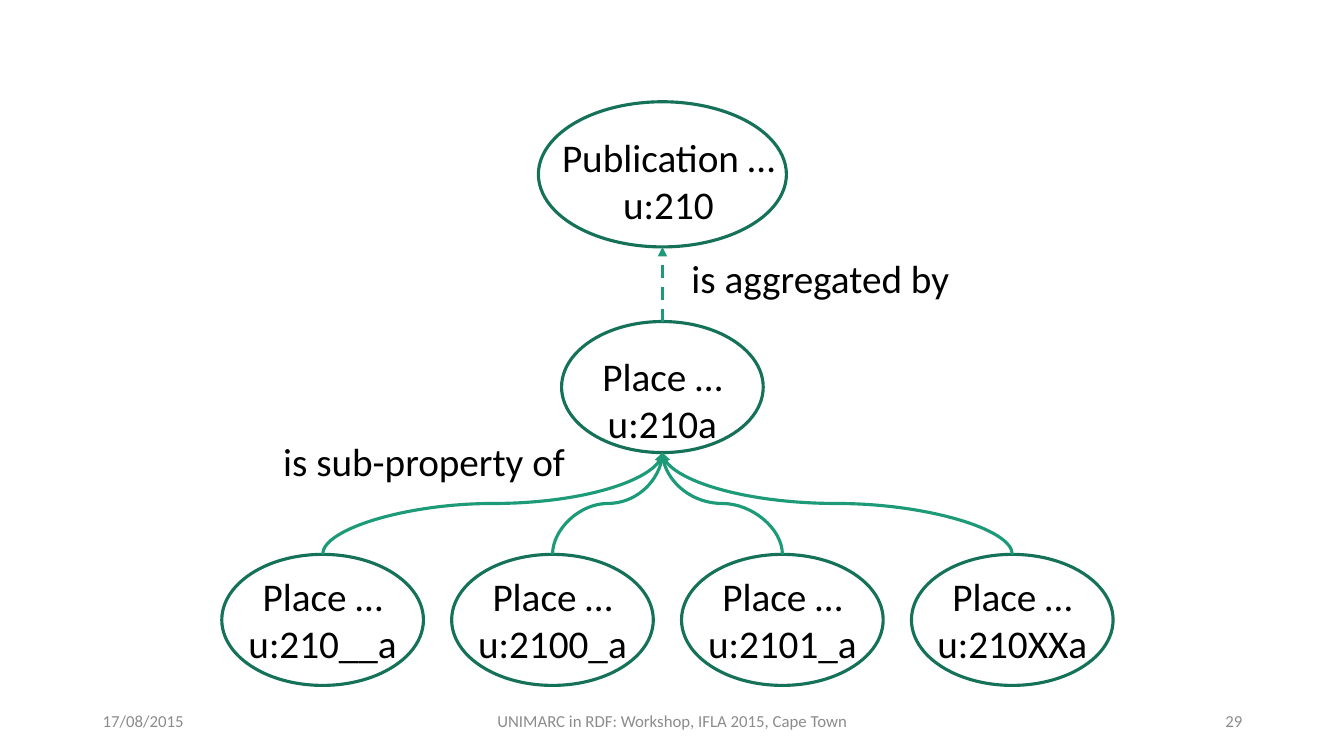
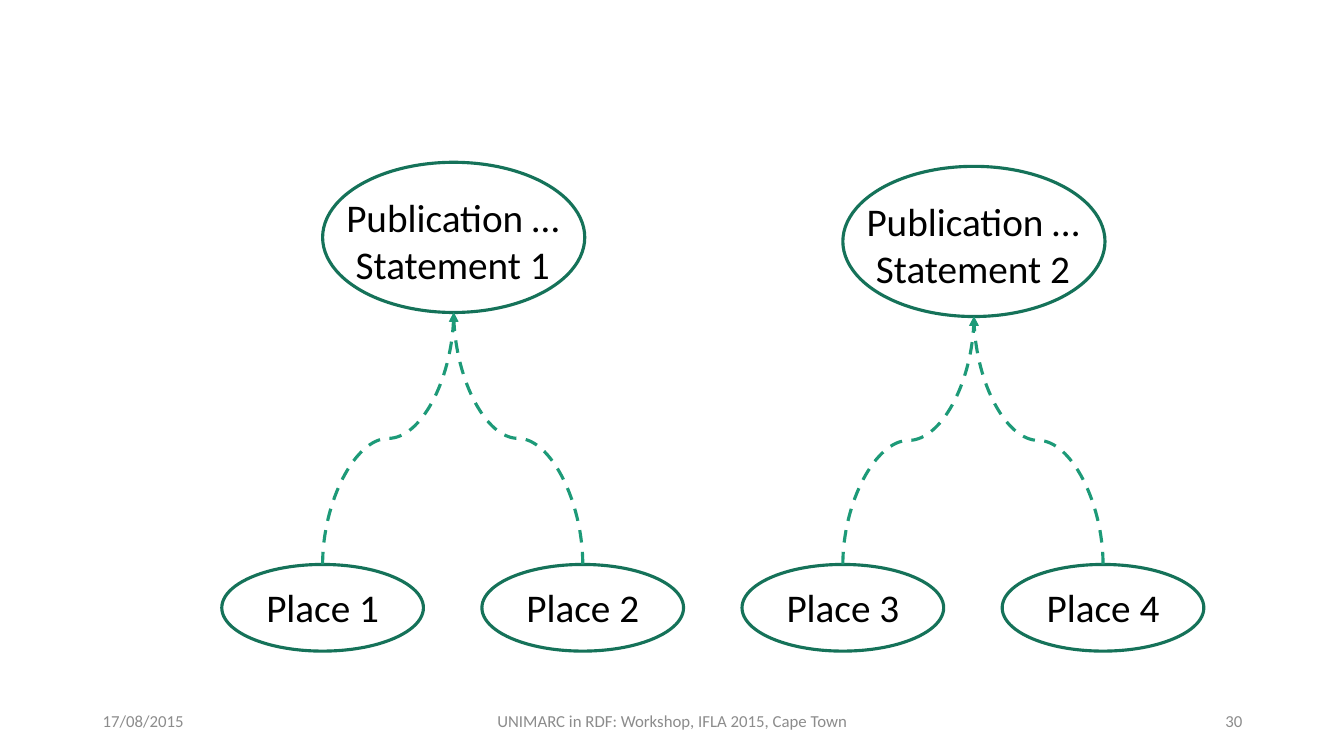
import pptx
import pptx.util
import pptx.dml.color
import pptx.enum.dml
import pptx.enum.shapes
import pptx.enum.text
import pptx.oxml.ns
import lxml.etree

PX = 9144
ALIGN = pptx.enum.text.PP_ALIGN
ANCHOR = pptx.enum.text.MSO_ANCHOR
FIT = pptx.enum.text.MSO_AUTO_SIZE
CONNECTOR = pptx.enum.shapes.MSO_CONNECTOR
OVAL = pptx.enum.shapes.MSO_SHAPE.OVAL
DASH = pptx.enum.dml.MSO_LINE.DASH
TOP_SITE, BOTTOM_SITE = 0, 4

THEME = {
    "font": "Calibri",
    "text": "000000", "muted": "8C8C8C", "outline": "157259", "arrow": "1D9A78",
    "body": 28, "small": 12, "line": 2.25,
}

SIZE = (1333, 750)
TEXT_HEIGHT = {1: 57, 2: 104}
FOOTER_TOP, FOOTER_HEIGHT = 695, 40
FOOTERS = [
    ("17/08/2015", 92, 300, ALIGN.LEFT),
    ("UNIMARC in RDF: Workshop, IFLA 2015, Cape Town", 442, 450, ALIGN.CENTER),
    ("{number}", 942, 300, ALIGN.RIGHT),
]


def row(names, left, step, top, size, shift, drop=0):
    return {key: (lines, (left + i * step, top + i * drop, *size), shift)
            for i, (key, lines) in enumerate(names.items())}


PROPERTY_LEAVES = {code: ["Place …", code]
                   for code in ("u:210__a", "u:2100_a", "u:2101_a", "u:210XXa")}
STATEMENTS = {f"Statement {n}": ["Publication …", f"Statement {n}"] for n in (1, 2)}
PLACES = {f"Place {n}": [f"Place {n}"] for n in (1, 2, 3, 4)}

SLIDES = [
    {
        "number": 29,
        "nodes": {
            "u:210": (["Publication …", "u:210"], (534, 101, 246, 144), (6, 6)),
            "u:210a": (["Place …", "u:210a"], (557, 319, 200, 130), (0, 13)),
            **row(PROPERTY_LEAVES, 220, 228, 550, (200, 130), (0, 0)),
        },
        "links": [("u:210a", "u:210", True)]
                 + [(leaf, "u:210a", False) for leaf in PROPERTY_LEAVES],
        "labels": [
            ("is sub-property of", (271, 429, 304, 57)),
            ("is aggregated by", (676, 247, 278, 57)),
        ],
    },
    {
        "number": 30,
        "nodes": {
            **row(STATEMENTS, 320, 516, 161, (260, 149), (-1, 3), 4),
            **row(PLACES, 220, 258, 560, (200, 86), (0, -1)),
        },
        "links": [(place, f"Statement {1 + i // 2}", True)
                  for i, place in enumerate(PLACES)],
        "labels": [],
    },
]


def emu(*values):
    return [round(v * PX) for v in values]


def rgb(name):
    return pptx.dml.color.RGBColor.from_string(THEME[name])


def set_all(target, values):
    for name, value in values.items():
        setattr(target, name, value)


def add_text(shapes, lines, box, size="body", color="text", align=ALIGN.LEFT, **frame):
    tf = shapes.add_textbox(*emu(*box)).text_frame
    set_all(tf, {"word_wrap": False, "auto_size": FIT.SHAPE_TO_FIT_TEXT, **frame})
    for i, line in enumerate(lines):
        p = tf.paragraphs[0] if i == 0 else tf.add_paragraph()
        p.alignment = align
        r = p.add_run()
        r.text = line
        set_all(r.font, {"name": THEME["font"], "size": pptx.util.Pt(THEME[size])})
        r.font.color.rgb = rgb(color)


def style_line(line, color):
    line.color.rgb = rgb(color)
    line.width = pptx.util.Pt(THEME["line"])


def add_node(slide, lines, box, shift):
    left, top, width, height = box
    text_height = TEXT_HEIGHT[len(lines)]
    text_top = top + (height - text_height) / 2 + shift[1]
    group = slide.shapes.add_group_shape()
    add_text(group.shapes, lines, (left + shift[0], text_top, width, text_height),
             align=ALIGN.CENTER)
    sp = group.shapes.add_shape(OVAL, *emu(*box))
    sp.shadow.inherit = False
    sp.fill.background()
    style_line(sp.line, "outline")
    return sp


def add_link(slide, child, parent, dashed):
    x1, y1 = child.left + child.width // 2, child.top
    x2, y2 = parent.left + parent.width // 2, parent.top + parent.height
    if x1 == x2:
        cx = slide.shapes.add_connector(CONNECTOR.STRAIGHT, x1, y1, x2, y2)
    else:
        half_w, half_h = abs(y2 - y1) // 2, abs(x2 - x1) // 2
        mid_x, mid_y = (x1 + x2) // 2, (y1 + y2) // 2
        side = 1 if x1 < x2 else -1
        cx = slide.shapes.add_connector(
            CONNECTOR.CURVE, mid_x + side * half_w, mid_y + half_h,
            mid_x - side * half_w, mid_y - half_h)
        cx.rotation = 90 if side == 1 else 270
    style_line(cx.line, "arrow")
    if dashed:
        cx.line.dash_style = DASH
    qn = pptx.oxml.ns.qn
    props = cx._element.nvCxnSpPr.cNvCxnSpPr
    for tag, sp, site in (("a:stCxn", child, TOP_SITE), ("a:endCxn", parent, BOTTOM_SITE)):
        lxml.etree.SubElement(props, qn(tag), id=str(sp.shape_id), idx=str(site))
    lxml.etree.SubElement(cx.line._get_or_add_ln(), qn("a:tailEnd"), type="triangle")
    lxml.etree.SubElement(cx._element.spPr, qn("a:effectLst"))


def add_footers(slide, number):
    for text, left, width, align in FOOTERS:
        add_text(slide.shapes, [text.format(number=number)],
                 (left, FOOTER_TOP, width, FOOTER_HEIGHT), "small", "muted", align,
                 word_wrap=True, auto_size=FIT.NONE, vertical_anchor=ANCHOR.MIDDLE)


def main():
    prs = pptx.Presentation()
    prs.slide_width, prs.slide_height = emu(*SIZE)
    for content in SLIDES:
        slide = prs.slides.add_slide(prs.slide_layouts[6])
        nodes = {key: add_node(slide, *node) for key, node in content["nodes"].items()}
        for child, parent, dashed in content["links"]:
            add_link(slide, nodes[child], nodes[parent], dashed)
        for text, box in content["labels"]:
            add_text(slide.shapes, [text], box)
        add_footers(slide, content["number"])
    prs.save("out.pptx")


if __name__ == "__main__":
    main()
